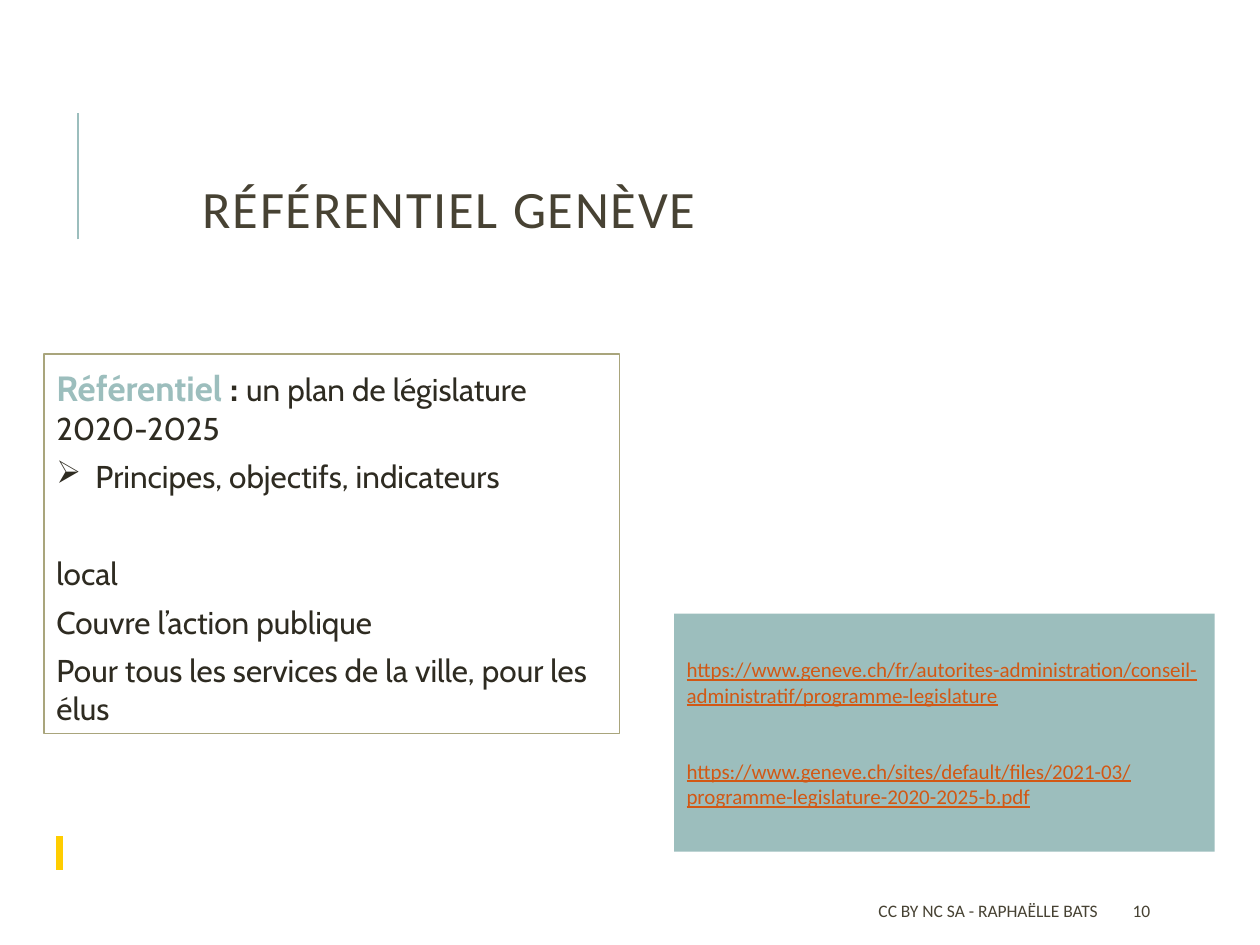
from lxml import etree
from pptx import Presentation
from pptx.dml.color import RGBColor
from pptx.enum.shapes import MSO_CONNECTOR, MSO_SHAPE
from pptx.enum.text import MSO_ANCHOR, PP_ALIGN
from pptx.oxml.ns import qn
from pptx.util import Inches, Pt

STRAIGHT = MSO_CONNECTOR.STRAIGHT
RECTANGLE = MSO_SHAPE.RECTANGLE
TOP, MIDDLE = MSO_ANCHOR.TOP, MSO_ANCHOR.MIDDLE
LEFT, RIGHT = PP_ALIGN.LEFT, PP_ALIGN.RIGHT

COLORS = {
    "teal": "9CBEBD",
    "olive": "A9A57C",
    "heading": "474233",
    "body": "2E2B21",
    "link": "D25814",
    "yellow": "FFCD00",
}
HEAD_FONT, BODY_FONT = "Calibri", "Cabin"
LINKS = [
    "https://www.geneve.ch/fr/autorites-administration/conseil-administratif/programme-legislature",
    "https://www.geneve.ch/sites/default/files/2021-03/programme-legislature-2020-2025-b.pdf",
]


def rgb(name):
    return RGBColor.from_string(COLORS[name])


def style_run(run, font, size, color, bold=False, underline=False):
    run.font.name = font
    run.font.size = Pt(size)
    run.font.color.rgb = rgb(color)
    run.font.bold = bold
    run.font.underline = underline


def setup_frame(shape, anchor, inset=0.1):
    frame = shape.text_frame
    frame.word_wrap = True
    frame.vertical_anchor = anchor
    frame.margin_left = frame.margin_right = Inches(0.1)
    frame.margin_top = frame.margin_bottom = Inches(inset)
    return frame


def add_label(slide, box, text, size, align=LEFT, inset=0.05):
    label = slide.shapes.add_textbox(*map(Inches, box))
    paragraph = setup_frame(label, MIDDLE, inset).paragraphs[0]
    paragraph.text = text
    paragraph.alignment = align
    style_run(paragraph.runs[0], HEAD_FONT, size, "heading")
    return paragraph.runs[0]


def add_panel(slide, box, anchor, fill=None, line=None):
    panel = slide.shapes.add_shape(RECTANGLE, *map(Inches, box))
    panel.shadow.inherit = False
    if fill:
        panel.fill.solid()
        panel.fill.fore_color.rgb = rgb(fill)
    else:
        panel.fill.background()
    if line:
        panel.line.color.rgb = rgb(line)
        panel.line.width = Pt(0.75)
    else:
        panel.line.fill.background()
    return setup_frame(panel, anchor)


def add_paragraph(frame, parts, space_before=0):
    """Write (text, style) parts as one paragraph, reusing the empty first one."""
    first = frame.paragraphs[0]
    paragraph = frame.add_paragraph() if first.runs else first
    paragraph.alignment = LEFT
    paragraph.space_before = Pt(space_before)
    for text, style in parts:
        run = paragraph.add_run()
        run.text = text
        style_run(run, **style)
    return paragraph


def set_bullet(paragraph, char, indent):
    properties = paragraph._p.get_or_add_pPr()
    properties.set("marL", str(Inches(indent)))
    properties.set("indent", str(-Inches(indent)))
    etree.SubElement(properties, qn("a:buChar")).set("char", char)


def set_highlight(run, color):
    highlight = etree.Element(qn("a:highlight"))
    etree.SubElement(highlight, qn("a:srgbClr")).set("val", COLORS[color])
    run._r.get_or_add_rPr().find(qn("a:solidFill")).addnext(highlight)


def add_accent_line(slide):
    accent = slide.shapes.add_connector(
        STRAIGHT, Inches(0.62), Inches(1.9), Inches(0.62), Inches(0.9))
    accent.line.color.rgb = rgb("teal")
    accent.line.width = Pt(1.5)
    etree.SubElement(accent._element.spPr, qn("a:effectLst"))


def add_links(slide):
    frame = add_panel(slide, (5.35, 4.87, 4.29, 1.89), MIDDLE, fill="teal")
    style = dict(font=HEAD_FONT, size=12, color="link", underline=True)
    for index, link in enumerate(LINKS):
        add_paragraph(frame, [(link, style)], space_before=29 * index)


def add_description(slide):
    frame = add_panel(slide, (0.35, 2.81, 4.57, 3.01), TOP, line="olive")
    plain = dict(font=BODY_FONT, size=18, color="body")
    strong = dict(font=BODY_FONT, size=20, bold=True)
    add_paragraph(frame, [
        ("Référentiel ", dict(strong, color="teal")),
        (": ", dict(strong, color="body")),
        ("un plan de législature 2020-2025", plain),
    ], 6)
    goals = add_paragraph(frame, [("Principes, objectifs, indicateurs", plain)], 6)
    set_bullet(goals, "➢", 0.31)

    # Scope of the plan, set apart by a wider gap
    for text, gap in (("local", 34), ("Couvre l’action publique", 6),
                      ("Pour tous les services de la ville, pour les élus", 6)):
        add_paragraph(frame, [(text, plain)], gap)

    # Yellow highlighted mark below the box
    mark = add_paragraph(frame, [(" ", dict(plain, size=16, bold=True))], 62)
    set_highlight(mark.runs[0], "yellow")


def main():
    deck = Presentation()
    deck.slide_width, deck.slide_height = Inches(10), Inches(7.5)
    slide = deck.slides.add_slide(deck.slide_layouts[6])

    add_accent_line(slide)
    add_links(slide)

    # Title
    title = add_label(slide, (1.51, 1.41, 6.17, 0.48), "RÉFÉRENTIEL GENÈVE", 30, inset=0.1)
    title._r.get_or_add_rPr().set("spc", "100")

    add_description(slide)

    # Footer
    add_label(slide, (3.97, 7.08, 4.84, 0.3), "CC BY NC SA - RAPHAËLLE BATS", 10, RIGHT)
    add_label(slide, (8.89, 7.08, 0.8, 0.3), "10", 10)

    deck.save("out.pptx")


if __name__ == "__main__":
    main()
